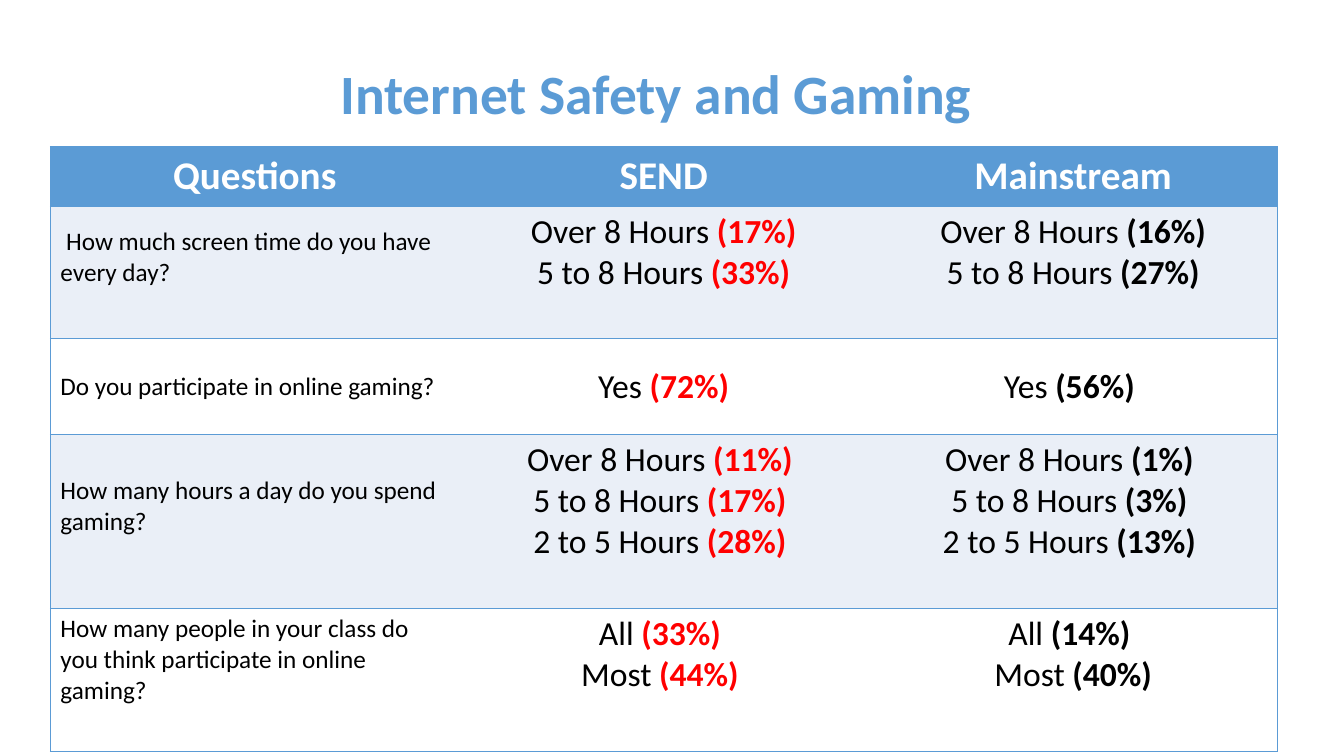
import lxml.etree
import pptx
import pptx.dml.color
import pptx.enum.text
import pptx.oxml.ns
import pptx.util

Pt = pptx.util.Pt
ALIGN = pptx.enum.text.PP_ALIGN
ANCHOR = pptx.enum.text.MSO_ANCHOR
FONT = "Calibri"
COLORS = {"blue": "5B9BD5", "band": "EAEFF7", "white": "FFFFFF", "black": "000000", "red": "FF0000"}
HEADINGS = ["Questions", "SEND", "Mainstream"]
COLUMN_WIDTHS = [291.8, 292.5, 292.5]
HEADER_HEIGHT = 42.5
BLANK_LINE = 22

SURVEY = [
    {"question": " How much screen time do you have every day?", "height": 94.7,
     "anchors": (ANCHOR.MIDDLE, ANCHOR.TOP), "space_below": BLANK_LINE,
     "send": [("Over 8 Hours ", "(17%)"), (" 5 to 8 Hours ", "(33%) ")],
     "mainstream": [("Over 8 Hours ", "(16%)"), (" 5 to 8 Hours ", "(27%) ")]},
    {"question": "Do you participate in online gaming?", "height": 68.6,
     "anchors": (ANCHOR.MIDDLE, ANCHOR.MIDDLE), "space_below": 0,
     "send": [("Yes ", "(72%)")],
     "mainstream": [("Yes ", "(56%) ")]},
    {"question": "How many hours a day do you spend gaming?", "height": 124.3,
     "anchors": (ANCHOR.MIDDLE, ANCHOR.TOP), "space_below": BLANK_LINE,
     "send": [("Over 8 Hours ", "(11%) "), ("5 to 8 Hours ", "(17%) "), ("2 to 5 Hours ", "(28%) ")],
     "mainstream": [("Over 8 Hours ", "(1%) "), ("5 to 8 Hours ", "(3%) "), ("2 to 5 Hours ", "(13%) ")]},
    {"question": "How many people in your class do you think participate in online gaming?", "height": 102.1,
     "anchors": (ANCHOR.TOP, ANCHOR.TOP), "space_below": 0,
     "send": [("All ", "(33%) "), ("Most ", "(44%) ")],
     "mainstream": [("All ", "(14%) "), ("Most ", "(40%)")]},
]


def color(name):
    """Return the named colour."""
    return pptx.dml.color.RGBColor.from_string(COLORS[name])


def add_run(paragraph, text, size, color_name="black", bold=False):
    """Append a formatted run to a paragraph."""
    run = paragraph.add_run()
    run.text = text
    run.font.name = FONT
    run.font.size = Pt(size)
    run.font.bold = bold
    run.font.color.rgb = color(color_name)


def set_borders(cell, visible_sides):
    """Draw thin blue borders on the given sides and clear the others."""
    properties = cell._tc.get_or_add_tcPr()
    for index, side in enumerate("LRTB"):
        line = lxml.etree.Element(pptx.oxml.ns.qn(f"a:ln{side}"), w=str(Pt(1)))
        if side in visible_sides:
            fill = lxml.etree.SubElement(line, pptx.oxml.ns.qn("a:solidFill"))
            lxml.etree.SubElement(fill, pptx.oxml.ns.qn("a:srgbClr"), val=COLORS["blue"])
        else:
            lxml.etree.SubElement(line, pptx.oxml.ns.qn("a:noFill"))
        properties.insert(index, line)


def style_cell(cell, column, fill_name):
    """Fill a cell and give it horizontal and outer borders."""
    cell.fill.solid()
    cell.fill.fore_color.rgb = color(fill_name)
    set_borders(cell, "TB" + {0: "L", len(HEADINGS) - 1: "R"}.get(column, ""))


def fill_header(table):
    """Write the column headings."""
    table.rows[0].height = Pt(HEADER_HEIGHT)
    for column, heading in enumerate(HEADINGS):
        cell = table.cell(0, column)
        style_cell(cell, column, "blue")
        paragraph = cell.text_frame.paragraphs[0]
        paragraph.alignment = ALIGN.CENTER
        add_run(paragraph, heading, 28, "white", True)


def fill_question(cell, entry):
    """Write the question of a survey entry."""
    cell.vertical_anchor = entry["anchors"][0]
    cell.margin_bottom = Pt(3.6 + entry["space_below"])
    add_run(cell.text_frame.paragraphs[0], entry["question"], 18)


def fill_answers(cell, answers, anchor, share_color):
    """Write one centred line per answer, with its share in bold."""
    cell.vertical_anchor = anchor
    for index, (label, share) in enumerate(answers):
        frame = cell.text_frame
        paragraph = frame.add_paragraph() if index else frame.paragraphs[0]
        paragraph.alignment = ALIGN.CENTER
        add_run(paragraph, label, 24)
        add_run(paragraph, share, 24, share_color, True)


def add_survey_table(slide):
    """Add the table of survey results."""
    height = HEADER_HEIGHT + sum(entry["height"] for entry in SURVEY)
    table = slide.shapes.add_table(len(SURVEY) + 1, len(HEADINGS), Pt(36), Pt(104.8),
                                   Pt(sum(COLUMN_WIDTHS)), Pt(height)).table
    for column, width in zip(table.columns, COLUMN_WIDTHS):
        column.width = Pt(width)
    fill_header(table)
    for row, entry in enumerate(SURVEY, 1):
        table.rows[row].height = Pt(entry["height"])
        for column in range(len(HEADINGS)):
            style_cell(table.cell(row, column), column, "band" if row % 2 else "white")
        fill_question(table.cell(row, 0), entry)
        fill_answers(table.cell(row, 1), entry["send"], entry["anchors"][1], "red")
        fill_answers(table.cell(row, 2), entry["mainstream"], entry["anchors"][1], "black")


def set_title(slide, text):
    """Place and format the slide title."""
    title = slide.shapes.title
    title.left, title.top, title.width, title.height = Pt(12.2), Pt(54), Pt(923), Pt(37.4)
    frame = title.text_frame
    frame.word_wrap = True
    frame.auto_size = pptx.enum.text.MSO_AUTO_SIZE.NONE
    frame.vertical_anchor = ANCHOR.MIDDLE
    frame.margin_left = frame.margin_top = 0
    frame.margin_right, frame.margin_bottom = Pt(10), Pt(7)
    paragraph = frame.paragraphs[0]
    paragraph.alignment = ALIGN.CENTER
    paragraph.line_spacing = 0.9
    add_run(paragraph, text, 39.6, "blue", True)


def main():
    """Build and save the presentation."""
    presentation = pptx.Presentation()
    presentation.slide_width, presentation.slide_height = Pt(960), Pt(540)
    slide = presentation.slides.add_slide(presentation.slide_layouts[5])
    set_title(slide, "Internet Safety and Gaming")
    add_survey_table(slide)
    presentation.save("out.pptx")


if __name__ == "__main__":
    main()
